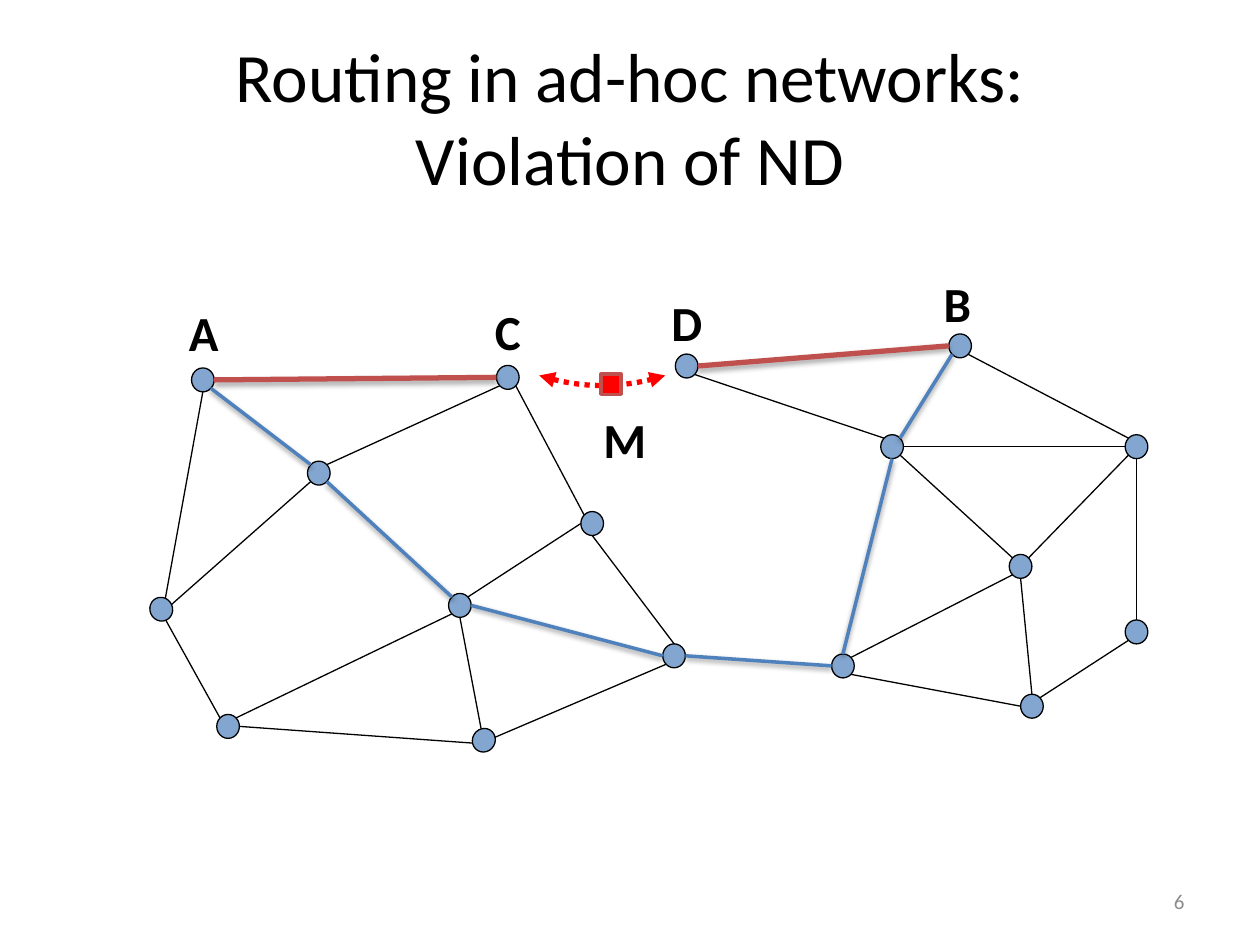
import math
from lxml import etree
from pptx import Presentation, util as u
from pptx.dml.color import RGBColor
from pptx.enum import dml, shapes, text
from pptx.oxml import ns

NODE_W, NODE_H = 0.18, 0.19
SITES = ["N", "NE", "E", "SE", "S", "SW", "W", "NW"]


def colour(code):
    return RGBColor.from_string(code)


def site_point(end):
    """Return the place of a compass site, such as "A:SE", on a node."""
    name, site = end.split(":")
    left, top, turn = nodes[name]
    angle = math.radians(SITES.index(site) * 45 + turn)
    return (u.Inches(left + NODE_W / 2 * (1 + math.sin(angle))),
            u.Inches(top + NODE_H / 2 * (1 - math.cos(angle))))


deck = Presentation()
deck.slide_width, deck.slide_height = u.Inches(10), u.Inches(7.5)
page = deck.slides.add_slide(deck.slide_layouts[5])

# Title
title = page.shapes.title
title.left, title.top = u.Inches(0.5), u.Inches(0.3)
title.width, title.height = u.Inches(9), u.Inches(1.25)
title.text_frame.vertical_anchor = text.MSO_ANCHOR.MIDDLE
para = title.text_frame.paragraphs[0]
para.alignment = text.PP_ALIGN.CENTER
for index, line in enumerate(["Routing in ad-hoc networks:", "Violation of ND"]):
    if index:
        para.add_line_break()
    span = para.add_run()
    span.text = line
    span.font.name, span.font.size = "Calibri", u.Pt(39.6)
    span.font.color.rgb = colour("000000")

# Nodes: left, top, rotation
nodes = {
    "A": (1.52, 2.92, 0), "B": (7.53, 2.65, 0), "C": (3.94, 2.9, 0),
    "D": (5.36, 2.81, 0), "E": (4.61, 4.06, 0), "F": (6.99, 3.45, 0),
    "G": (3.75, 5.78, 31), "H": (2.44, 3.66, 0), "I": (3.56, 4.71, 0),
    "J": (1.72, 5.67, 0), "K": (1.19, 4.74, -23.5), "L": (5.26, 5.11, 0),
    "N": (8.01, 4.4, 0), "O": (8.93, 3.45, 0), "P": (8.93, 4.92, 0),
    "Q": (8.1, 5.51, 0), "R": (6.6, 5.19, 0),
}
for left, top, turn in nodes.values():
    node = page.shapes.add_shape(shapes.MSO_SHAPE.OVAL, u.Inches(left), u.Inches(top),
                                 u.Inches(NODE_W), u.Inches(NODE_H))
    node.rotation = turn
    node.shadow.inherit = False
    node.fill.solid()
    node.fill.fore_color.rgb = colour("4F81BD")
    fill_colour = node.fill._xPr.find(".//" + ns.qn("a:srgbClr"))
    etree.SubElement(fill_colour, ns.qn("a:alpha"), val="70000")
    node.line.color.rgb = colour("000000")
    node.line.width = u.Pt(0.75)

# Links: plain links, the true route, and the claimed links
plain = """K:E-H:SW A:S-K:NE K:S-J:NW J:NE-I:SW J:E-G:SW I:S-G:NW G:NE-L:SW
    E:S-L:N D:SE-F:NW F:SE-N:NW R:NE-N:SW C:SW-H:NE C:SE-E:NW B:SE-O:NW
    N:NE-O:SW F:E-O:W I:NE-E:W N:S-Q:N O:S-P:N Q:NE-P:SW R:SE-Q:W"""
route = "A:SE-H:NW H:SE-I:NW I:E-L:W L:E-R:W R:N-F:S B:SW-F:NE"
claimed = "A:E-C:W B:W-D:E"
link_styles = [  # links, colour, width, shadow opacity, shadow distance
    (plain, "000000", 0.75, 0, 0),
    (route, "4F81BD", 2, 38, 1.6),
    (claimed, "C0504D", 3, 35, 1.8),
]
for links, tone, width, opacity, distance in link_styles:
    for link in links.split():
        start, end = link.split("-")
        connector = page.shapes.add_connector(
            shapes.MSO_CONNECTOR.STRAIGHT, *site_point(start), *site_point(end))
        connector.line.color.rgb = colour(tone)
        connector.line.width = u.Pt(width)
        effects = etree.SubElement(connector._element.spPr, ns.qn("a:effectLst"))
        if opacity:
            shadow = etree.SubElement(
                effects, ns.qn("a:outerShdw"), blurRad=str(u.Pt(3.1)),
                dist=str(u.Pt(distance)), dir="5400000", rotWithShape="0")
            shade = etree.SubElement(shadow, ns.qn("a:srgbClr"), val="000000")
            etree.SubElement(shade, ns.qn("a:alpha"), val=str(opacity * 1000))

# Dotted two-way arrow through the relay, sagging as a parabola
STEPS = 16
curve = [(u.Inches(4.28 + i / STEPS),
          u.Inches(2.98 + 0.08 * (1 - (2 * i / STEPS - 1) ** 2)))
         for i in range(STEPS + 1)]
builder = page.shapes.build_freeform(*curve[0])
builder.add_line_segments(curve[1:], close=False)
arrow = builder.convert_to_shape()
arrow.shadow.inherit = False
arrow.fill.background()
arrow.line.color.rgb = colour("FF0000")
arrow.line.width = u.Pt(3)
arrow.line.dash_style = dml.MSO_LINE.ROUND_DOT
for tip in ("a:headEnd", "a:tailEnd"):
    etree.SubElement(arrow.line._get_or_add_ln(), ns.qn(tip), type="triangle")

# Relay
relay = page.shapes.add_shape(shapes.MSO_SHAPE.RECTANGLE, u.Inches(4.77), u.Inches(2.97),
                              u.Inches(0.16), u.Inches(0.16))
relay.shadow.inherit = False
relay.fill.solid()
relay.fill.fore_color.rgb = colour("FF0000")
relay.line.color.rgb = colour("C0504D")
relay.line.width = u.Pt(2)

# Node labels and slide number
LEFT, RIGHT = text.PP_ALIGN.LEFT, text.PP_ALIGN.RIGHT
TOP, MIDDLE = text.MSO_ANCHOR.TOP, text.MSO_ANCHOR.MIDDLE
labels = [
    ("A", 1.4, 2.35, 0.46, 0.57, 28, "000000", LEFT, TOP),
    ("B", 7.39, 2.12, 0.42, 0.57, 28, "000000", LEFT, TOP),
    ("C", 3.83, 2.34, 0.42, 0.57, 28, "000000", LEFT, TOP),
    ("D", 5.23, 2.27, 0.45, 0.57, 28, "000000", LEFT, TOP),
    ("M", 4.69, 3.2, 0.55, 0.57, 28, "000000", LEFT, TOP),
    ("6", 7.17, 6.95, 2.33, 0.4, 12, "8C8C8C", RIGHT, MIDDLE),
]
for words, left, top, width, height, size, tone, align, anchor in labels:
    box = page.shapes.add_textbox(u.Inches(left), u.Inches(top),
                                  u.Inches(width), u.Inches(height))
    box.text_frame.word_wrap = align == RIGHT
    box.text_frame.vertical_anchor = anchor
    para = box.text_frame.paragraphs[0]
    para.alignment = align
    span = para.add_run()
    span.text = words
    span.font.name, span.font.size = "Calibri", u.Pt(size)
    span.font.bold = align == LEFT
    span.font.color.rgb = colour(tone)

deck.save("out.pptx")
